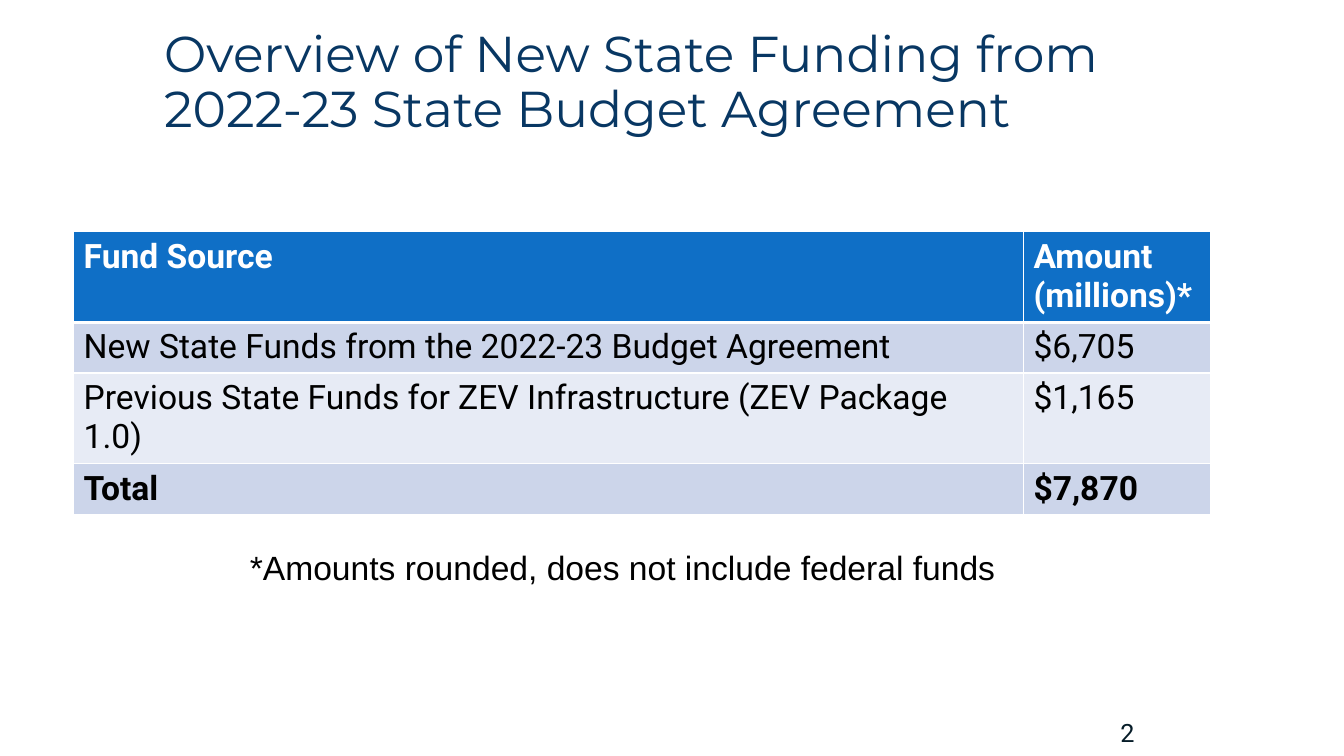
import pptx
import pptx.util
import pptx.dml.color
import pptx.enum.text
import pptx.oxml
import pptx.oxml.ns

Pt = pptx.util.Pt
RGB = pptx.dml.color.RGBColor.from_string
Align = pptx.enum.text.PP_ALIGN
Anchor = pptx.enum.text.MSO_ANCHOR

theme = {
    "title": ("Montserrat", 36, "083763"),
    "page": ("Roboto", 18, "061C28"),
    "head": ("Roboto", 24, "FFFFFF"),
    "body": ("Roboto", 24, "000000"),
    "note": ("Arial", 24, "000000"),
    "fills": ["0F6FC6", "CCD5EA", "E7EBF5"],
    "rule": "FFFFFF",
}

deck = pptx.Presentation()
deck.slide_width = pptx.util.Inches(13.33)
deck.slide_height = pptx.util.Inches(7.5)
wide = deck.slide_width / 100
high = deck.slide_height / 100
slide = deck.slides.add_slide(deck.slide_layouts[6])


def place(left, top, width, height):
    return int(left * wide), int(top * high), int(width * wide), int(height * high)


def write(frame, text, style, bold=False):
    run = frame.paragraphs[0].add_run()
    run.text = text
    face, size, tint = theme[style]
    run.font.name = face
    run.font.size = Pt(size)
    run.font.color.rgb = RGB(tint)
    run.font.bold = bold


texts = [
    ("title", "Overview of New State Funding from 2022-23 State Budget Agreement",
     (11.48, 3.47, 81.7, 15.2), Anchor.MIDDLE, Align.LEFT, 0.9),
    ("page", "2", (70.67, 94.27, 14.48, 5.33), Anchor.MIDDLE, Align.RIGHT, 1.0),
    ("note", "*Amounts rounded, does not include federal funds",
     (17.85, 71.73, 59.79, 6.67), Anchor.TOP, Align.LEFT, 1.0),
]
for style, text, spot, anchor, align, lead in texts:
    frame = slide.shapes.add_textbox(*place(*spot)).text_frame
    frame.word_wrap = True
    frame.vertical_anchor = anchor
    frame.paragraphs[0].alignment = align
    frame.paragraphs[0].line_spacing = lead
    write(frame, text, style)

funds = [
    ("Fund Source", "Amount (millions)*"),
    ("New State Funds from the 2022-23 Budget Agreement", "$6,705"),
    ("Previous State Funds for ZEV Infrastructure (ZEV Package 1.0)", "$1,165"),
    ("Total", "$7,870"),
]
last = len(funds) - 1
table = slide.shapes.add_table(len(funds), 2, *place(5.48, 30.67, 84.62, 21.88)).table
for col, share in zip(table.columns, (70.67, 13.95)):
    col.width = int(share * wide)

for r, fund in enumerate(funds):
    table.rows[r].height = int(5.47 * high)
    shade = 0 if r == 0 else 2 - r % 2
    for c, text in enumerate(fund):
        cell = table.cell(r, c)
        cell.fill.solid()
        cell.fill.fore_color.rgb = RGB(theme["fills"][shade])
        write(cell.text_frame, text, "body" if r else "head", r in (0, last))
        props = cell._tc.get_or_add_tcPr()
        for i, side in enumerate("LRTB"):
            thick = (r, side) in ((0, "B"), (1, "T"))
            line = pptx.oxml.parse_xml(
                f'<a:ln{side} {pptx.oxml.ns.nsdecls("a")} w="{Pt(3 if thick else 1)}">'
                f'<a:solidFill><a:srgbClr val="{theme["rule"]}"/></a:solidFill></a:ln{side}>')
            props.insert(i, line)

deck.save("out.pptx")
